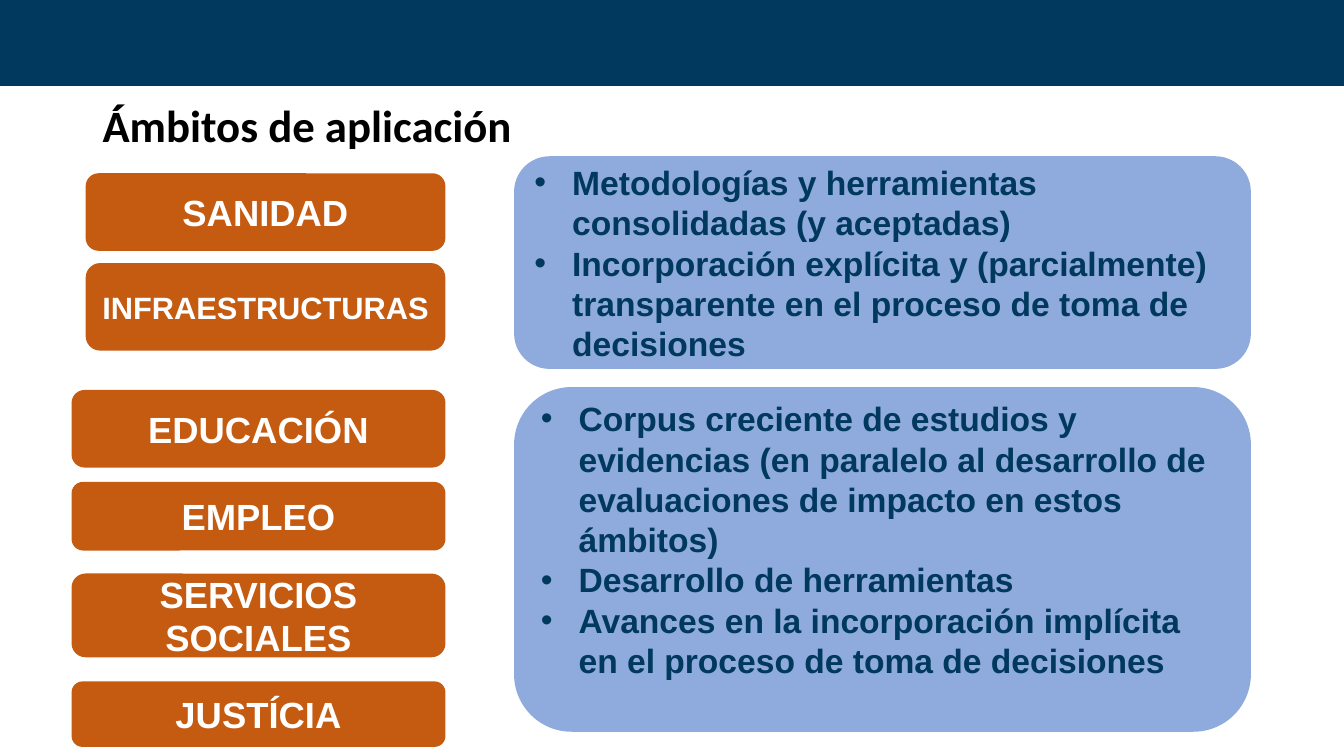
from dataclasses import dataclass

from lxml import etree
from pptx import Presentation
from pptx.dml.color import RGBColor
from pptx.enum.shapes import MSO_SHAPE
from pptx.enum.text import MSO_ANCHOR, PP_ALIGN
from pptx.oxml.ns import qn
from pptx.util import Pt

RECTANGLE = MSO_SHAPE.RECTANGLE
ROUNDED = MSO_SHAPE.ROUNDED_RECTANGLE
MIDDLE = MSO_ANCHOR.MIDDLE
LEFT = PP_ALIGN.LEFT
CENTER = PP_ALIGN.CENTER


@dataclass(frozen=True)
class Theme:
    navy: RGBColor = RGBColor.from_string("00395D")
    orange: RGBColor = RGBColor.from_string("C55A11")
    sky: RGBColor = RGBColor.from_string("8FAADC")
    white: RGBColor = RGBColor.from_string("FFFFFF")
    black: RGBColor = RGBColor.from_string("000000")
    heading_font: str = "Calibri"
    body_font: str = "Arial"
    heading_size: float = 32
    area_size: float = 26
    long_area_size: float = 22
    finding_size: float = 24
    leading: float = 1.2
    bullet_indent: float = 27


THEME = Theme()

AREAS = [
    ("SANIDAD", 61.2, 123.8, 257, 55.4, THEME.area_size),
    ("INFRAESTRUCTURAS", 61.2, 187.9, 257, 62.6, THEME.long_area_size),
    ("EDUCACIÓN", 51.1, 278.6, 267.1, 55.4, THEME.area_size),
    ("EMPLEO", 51.1, 344.2, 267.1, 49, THEME.area_size),
    ("SERVICIOS SOCIALES", 51.1, 409.7, 267.1, 59.8, THEME.area_size),
    ("JUSTÍCIA", 51.1, 486.7, 267.1, 46.8, THEME.area_size),
]

CONSOLIDATED = [
    "Metodologías y herramientas consolidadas (y aceptadas)",
    "Incorporación explícita y (parcialmente) transparente en el proceso de toma de decisiones",
]

EMERGING = [
    "Corpus creciente de estudios y evidencias (en paralelo al desarrollo de "
    "evaluaciones de impacto en estos ámbitos)",
    "Desarrollo de herramientas",
    "Avances en la incorporación implícita en el proceso de toma de decisiones",
]


def apply_format(target, values):
    for attribute, value in values.items():
        setattr(target, attribute, value)


def write(paragraph, text, font_name, size, color, **layout):
    paragraph.text = text
    apply_format(paragraph, layout)
    font = paragraph.runs[0].font
    apply_format(font, {"name": font_name, "size": Pt(size), "bold": True})
    font.color.rgb = color


def add_panel(slide, preset, box, fill, outline=None):
    panel = slide.shapes.add_shape(preset, *map(Pt, box))
    panel.shadow.inherit = False
    panel.fill.solid()
    panel.fill.fore_color.rgb = fill
    if outline is None:
        panel.line.fill.background()
    else:
        panel.line.color.rgb = outline
        panel.line.width = Pt(1)
    apply_format(panel.text_frame, {"word_wrap": True, "vertical_anchor": MIDDLE})
    return panel


def add_bullet(paragraph):
    properties = paragraph._p.get_or_add_pPr()
    indent = Pt(THEME.bullet_indent)
    properties.set("marL", str(indent))
    properties.set("indent", str(-indent))
    etree.SubElement(properties, qn("a:buFont"), typeface=THEME.body_font)
    etree.SubElement(properties, qn("a:buChar"), char="•")


def add_heading(slide, text):
    heading = slide.shapes.add_textbox(Pt(66.2), Pt(53.3), Pt(828), Pt(76.3))
    frame = heading.text_frame
    apply_format(frame, {"word_wrap": True, "vertical_anchor": MIDDLE})
    write(frame.paragraphs[0], text, THEME.heading_font, THEME.heading_size,
          THEME.black, line_spacing=0.9)


def add_area(slide, name, left, top, width, height, size):
    area = add_panel(slide, ROUNDED, (left, top, width, height), THEME.orange)
    write(area.text_frame.paragraphs[0], name, THEME.body_font, size, THEME.white,
          alignment=CENTER, line_spacing=Pt(size * THEME.leading))


def add_findings(slide, findings, top, height, bottom_margin=3.6):
    panel = add_panel(slide, ROUNDED, (367.2, top, 526.3, height), THEME.sky)
    frame = panel.text_frame
    frame.margin_bottom = Pt(bottom_margin)
    for index, finding in enumerate(findings):
        paragraph = frame.add_paragraph() if index else frame.paragraphs[0]
        add_bullet(paragraph)
        write(paragraph, finding, THEME.body_font, THEME.finding_size, THEME.navy,
              alignment=LEFT, line_spacing=Pt(THEME.finding_size * THEME.leading))


def main():
    deck = Presentation()
    apply_format(deck, {"slide_width": Pt(960), "slide_height": Pt(540)})
    slide = deck.slides.add_slide(deck.slide_layouts[6])
    add_panel(slide, RECTANGLE, (0, 0, 960, 61.2), THEME.navy, THEME.navy)
    add_heading(slide, "Ámbitos de aplicación")
    for area in AREAS:
        add_area(slide, *area)
    add_findings(slide, CONSOLIDATED, 111.6, 151.9)
    add_findings(slide, EMERGING, 276.5, 246.2, bottom_margin=32.4)
    deck.save("out.pptx")


if __name__ == "__main__":
    main()
